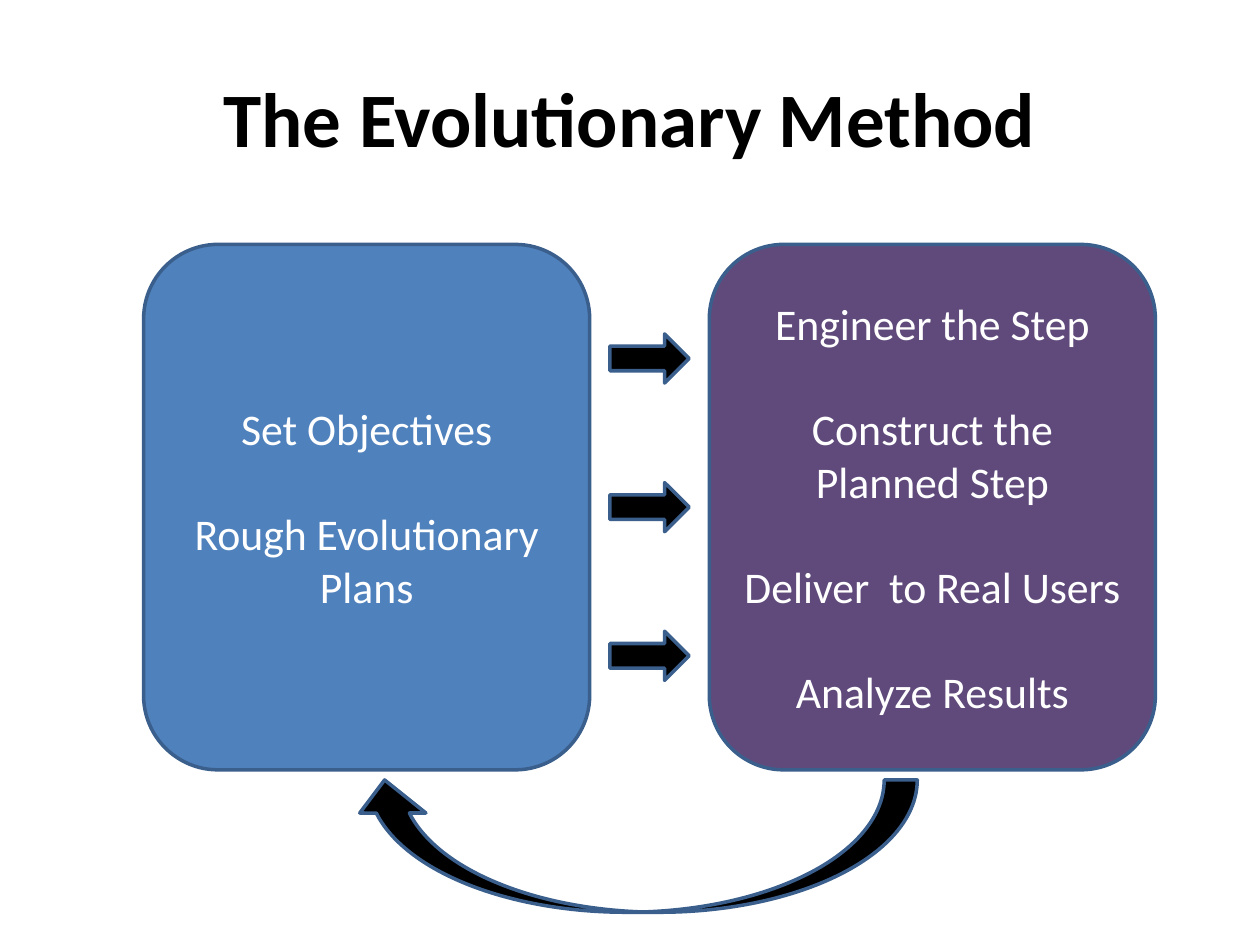
"""Build the slide 'The Evolutionary Method': two process boxes joined in a cycle."""
from pptx import Presentation
from pptx.dml.color import RGBColor
from pptx.enum.shapes import MSO_SHAPE
from pptx.enum.text import MSO_ANCHOR, PP_ALIGN
from pptx.util import Inches, Pt

BOX = MSO_SHAPE.FLOWCHART_ALTERNATE_PROCESS
RIGHT_ARROW = MSO_SHAPE.RIGHT_ARROW
CURVED_ARROW = MSO_SHAPE.CURVED_LEFT_ARROW
MIDDLE = MSO_ANCHOR.MIDDLE
CENTER = PP_ALIGN.CENTER

COLORS = {"ink": "000000", "paper": "FFFFFF", "blue": "4F81BD",
          "purple": "604A7B", "edge": "3A5F8C"}

BOX_LEFT, BOX_TOP, BOX_W, BOX_H = 1.14, 1.94, 3.54, 4.17
BOX_PITCH = 4.49
ARROW_LEFT, ARROW_TOP, ARROW_W, ARROW_H = 4.84, 2.65, 0.63, 0.39
ARROW_PITCH = 1.18


def write(sp, lines, size, color, bold=False, gap=0):
    tf = sp.text_frame
    tf.word_wrap = True
    tf.vertical_anchor = MIDDLE
    for i, line in enumerate(lines):
        p = tf.add_paragraph() if i else tf.paragraphs[0]
        p.alignment = CENTER
        p.space_before = Pt(gap if i else 0)
        r = p.add_run()
        r.text = line
        r.font.name = "Calibri"
        r.font.size = Pt(size)
        r.font.bold = bold
        r.font.color.rgb = RGBColor.from_string(COLORS[color])


def add_block(kind, left, top, width, height, fill):
    sp = s.shapes.add_shape(kind, Inches(left), Inches(top), Inches(width), Inches(height))
    sp.shadow.inherit = False
    sp.fill.solid()
    sp.fill.fore_color.rgb = RGBColor.from_string(COLORS[fill])
    sp.line.color.rgb = RGBColor.from_string(COLORS["edge"])
    sp.line.width = Pt(2)
    return sp


prs = Presentation()
prs.slide_width, prs.slide_height = Inches(10), Inches(7.5)
s = prs.slides.add_slide(prs.slide_layouts[5])

title = s.shapes.title
title.left, title.top = Inches(0.5), Inches(0.3)
title.width, title.height = Inches(9), Inches(1.25)
write(title, ["The Evolutionary Method"], size=44, color="ink", bold=True)

boxes = [
    ("blue", ["Set Objectives", "Rough Evolutionary Plans"]),
    ("purple", ["Engineer the Step", "Construct the Planned Step",
                "Deliver  to Real Users", "Analyze Results"]),
]
for col, (fill, lines) in enumerate(boxes):
    sp = add_block(BOX, BOX_LEFT + col * BOX_PITCH, BOX_TOP, BOX_W, BOX_H, fill)
    write(sp, lines, size=25, color="paper", gap=30)

for row in range(3):
    add_block(RIGHT_ARROW, ARROW_LEFT, ARROW_TOP + row * ARROW_PITCH, ARROW_W, ARROW_H, "ink")

feedback = add_block(CURVED_ARROW, 4.51, 4.47, 1.05, BOX_PITCH, "ink")
feedback.rotation = 90

prs.save("out.pptx")
